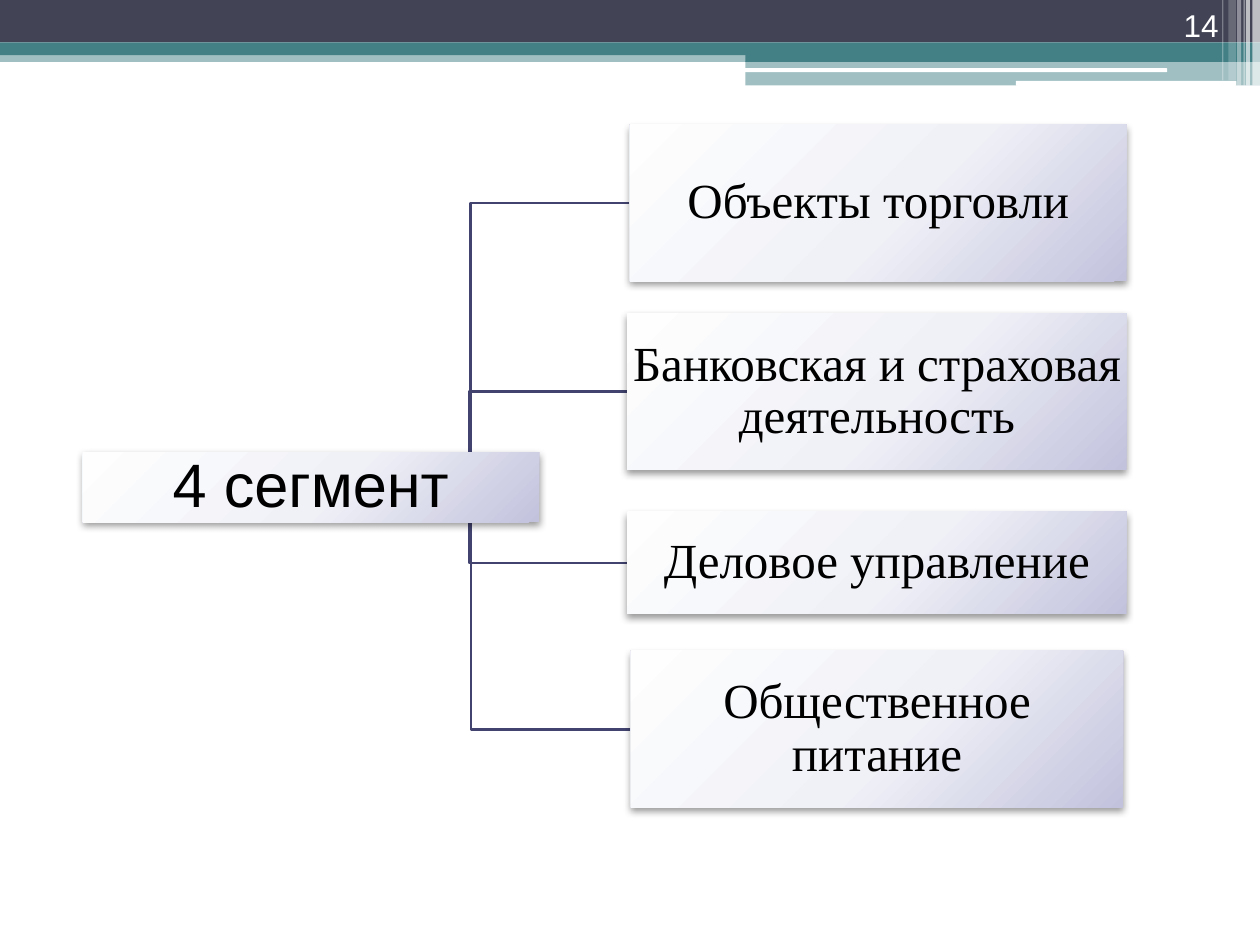
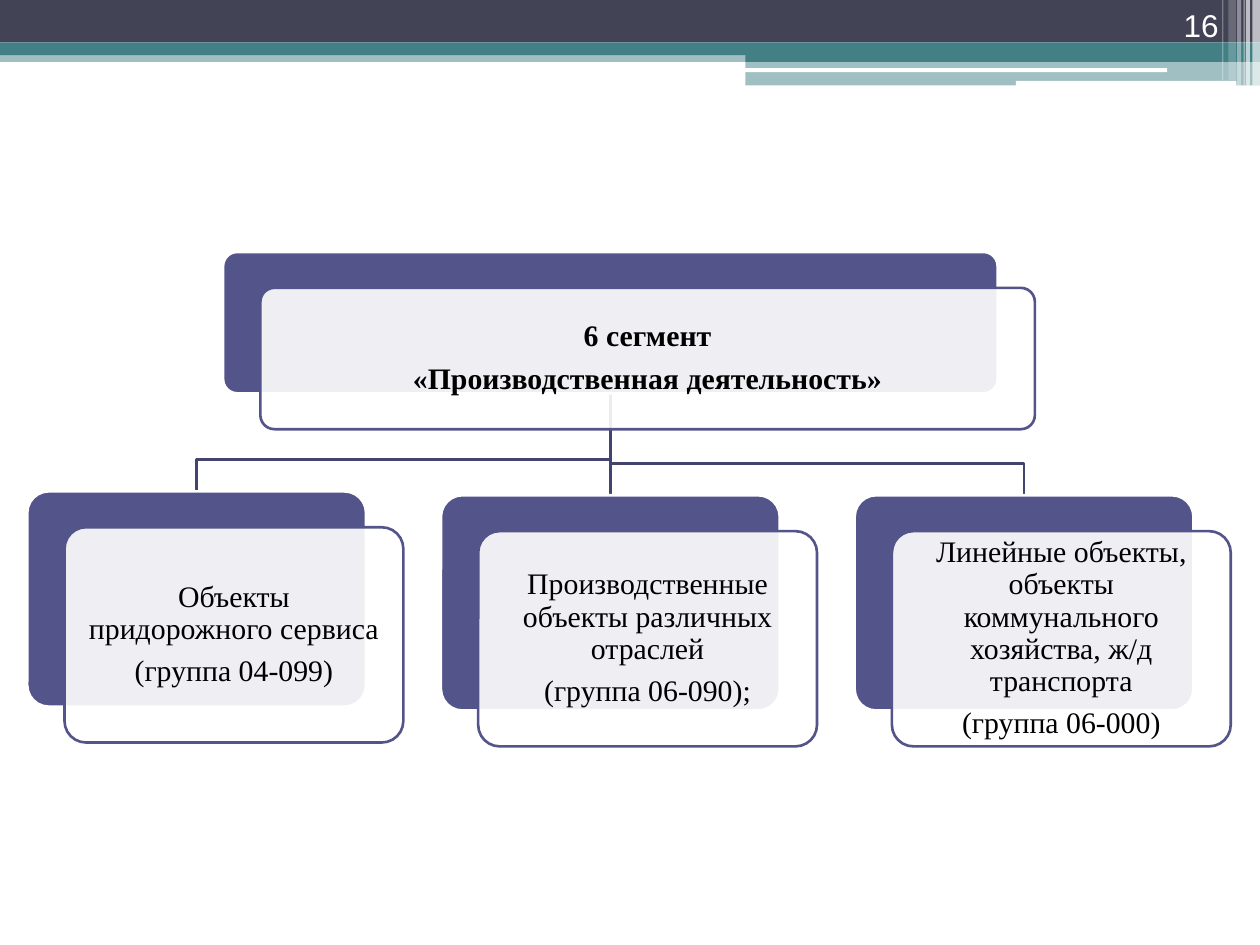
from dataclasses import dataclass
from typing import Optional

from lxml import etree
from pptx import Presentation
from pptx.dml.color import RGBColor
from pptx.enum.shapes import MSO_CONNECTOR, MSO_SHAPE
from pptx.enum.text import MSO_ANCHOR, PP_ALIGN
from pptx.oxml import parse_xml
from pptx.oxml.ns import nsdecls, qn
from pptx.util import Pt

RECTANGLE = MSO_SHAPE.RECTANGLE
ROUNDED = MSO_SHAPE.ROUNDED_RECTANGLE
STRAIGHT = MSO_CONNECTOR.STRAIGHT
CENTER, RIGHT = PP_ALIGN.CENTER, PP_ALIGN.RIGHT
MIDDLE, BOTTOM = MSO_ANCHOR.MIDDLE, MSO_ANCHOR.BOTTOM

WHITE = RGBColor(0xFF, 0xFF, 0xFF)
BLACK = RGBColor(0x00, 0x00, 0x00)
SLATE = RGBColor(0x42, 0x44, 0x56)
TEAL = RGBColor(0x43, 0x80, 0x86)
INDIGO = RGBColor(0x53, 0x54, 0x8A)
LINK = RGBColor(0x42, 0x43, 0x6F)
GRADIENT = (
    (0, RGBColor(0xFE, 0xFE, 0xFE)),
    (55, RGBColor(0xF0, 0xF1, 0xF7)),
    (100, RGBColor(0xC2, 0xC2, 0xDD)),
)

SANS, SERIF = "Arial", "Times New Roman"
LINE_WIDTH = 1.5
BEND_ABOVE_CARD = 18
CARD_SHIFT_X, CARD_SHIFT_Y = 21.3, 20.5


@dataclass(frozen=True)
class Area:
    left: float
    top: float
    width: float
    height: float

    @property
    def center_x(self) -> float:
        return self.left + self.width / 2

    @property
    def center_y(self) -> float:
        return self.top + self.height / 2

    @property
    def bottom(self) -> float:
        return self.top + self.height

    def shifted(self, across: float, down: float) -> "Area":
        return Area(self.left + across, self.top + down, self.width, self.height)


@dataclass(frozen=True)
class Band:
    area: Area
    color: RGBColor = WHITE
    opacity: int = 100
    kind: int = RECTANGLE


@dataclass(frozen=True)
class TextStyle:
    size: float
    font: str
    color: RGBColor = BLACK
    bold: bool = False
    align: int = CENTER
    anchor: int = MIDDLE
    margin: float = 1.6
    line_spacing: float = 0.9
    after: float = 0.35


@dataclass(frozen=True)
class Node:
    area: Area
    lines: tuple[str, ...]
    style: TextStyle


NUMBER_STYLE = TextStyle(18, SANS, WHITE, align=RIGHT, anchor=BOTTOM,
                         margin=7.2, line_spacing=1.0, after=0)
SEGMENT_STYLE = TextStyle(35, SANS)
TOPIC_STYLE = TextStyle(28, SERIF)
CARD_STYLE = TextStyle(17, SERIF, margin=8.6)
HEAD_CARD_STYLE = TextStyle(17, SERIF, bold=True, margin=8.6)

NUMBER_AREA = Area(643.7, 0, 59.8, 28.8)
BANDS = (
    Band(Area(0, 28.8, 720, 6.6), TEAL, 50),
    Band(Area(0, 0, 720, 24.3), SLATE),
    Band(Area(0, 24.3, 720, 7.2), TEAL),
    Band(Area(426, 28.2, 294, 7.2), TEAL),
    Band(Area(426, 34.8, 294, 14), TEAL, 50),
    Band(Area(425.5, 39, 241.5, 2.2), kind=ROUNDED),
    Band(Area(580.5, 46.2, 126, 2.8), kind=ROUNDED),
    Band(Area(715.7, 0, 4.3, 49), opacity=65),
    Band(Area(712, 0, 2.2, 49), opacity=65),
    Band(Area(710.6, 0, 0.7, 49), opacity=60),
    Band(Area(707, 0, 2.2, 49), opacity=40),
    Band(Area(702, 0, 4.3, 46), opacity=20),
    Band(Area(698.4, 0, 0.7, 46), opacity=30),
)

TRADE_ROOT = Node(Area(47.3, 258.4, 260.8, 40), ("4 сегмент",), SEGMENT_STYLE)
TRADE_TOPICS = (
    Node(Area(360, 71.3, 283.8, 89.5), ("Объекты торговли",), TOPIC_STYLE),
    Node(Area(358.4, 179, 285.4, 89.5),
         ("Банковская и страховая деятельность",), TOPIC_STYLE),
    Node(Area(358.4, 292.5, 285.4, 58.3), ("Деловое управление",), TOPIC_STYLE),
    Node(Area(360.6, 372, 281.2, 89.5), ("Общественное питание",), TOPIC_STYLE),
)

INDUSTRY_ROOT = Node(Area(127.5, 144, 442.6, 80.8),
                     ("6 сегмент", "«Производственная деятельность»"),
                     HEAD_CARD_STYLE)
INDUSTRY_CARDS = (
    (280.8, ("Объекты придорожного сервиса", "(группа 04-099)")),
    (283, ("Производственные объекты различных отраслей", "(группа 06-090);")),
    (283, ("Линейные объекты, объекты коммунального хозяйства, ж/д транспорта",
           "(группа 06-000)")),
)
CARD_LEFT, CARD_PITCH, CARD_WIDTH, CARD_HEIGHT = 15.6, 236.4, 193.6, 123


def lengths(area: Area) -> tuple[int, int, int, int]:
    return Pt(area.left), Pt(area.top), Pt(area.width), Pt(area.height)


def add_box(page, area: Area, kind: int, fill: RGBColor, opacity: int = 100,
            line: Optional[RGBColor] = None):
    box = page.shapes.add_shape(kind, *lengths(area))
    box.shadow.inherit = False
    box.fill.solid()
    box.fill.fore_color.rgb = fill
    if opacity < 100:
        color = box.element.spPr.find(qn("a:solidFill"))[0]
        etree.SubElement(color, qn("a:alpha"), val=str(opacity * 1000))
    if line is None:
        box.line.fill.background()
    else:
        box.line.color.rgb = line
        box.line.width = Pt(LINE_WIDTH)
    return box


def write_text(box, lines: tuple[str, ...], style: TextStyle) -> None:
    frame = box.text_frame
    frame.word_wrap = True
    frame.vertical_anchor = style.anchor
    frame.margin_left = frame.margin_right = Pt(style.margin)
    frame.margin_top = frame.margin_bottom = Pt(min(style.margin, 3.6))
    frame.text = "\n".join(lines)
    for para in frame.paragraphs:
        para.alignment = style.align
        para.line_spacing = style.line_spacing
        para.space_after = Pt(style.after * style.size)
        for span in para.runs:
            span.font.name = style.font
            span.font.size = Pt(style.size)
            span.font.bold = style.bold
            span.font.color.rgb = style.color


def add_gradient_and_shadow(box) -> None:
    properties = box.element.spPr
    stops = "".join(
        f'<a:gs pos="{position * 1000}"><a:srgbClr val="{color}"/></a:gs>'
        for position, color in GRADIENT
    )
    gradient = parse_xml(
        f'<a:gradFill {nsdecls("a")} rotWithShape="1"><a:gsLst>{stops}</a:gsLst>'
        '<a:path path="circle"><a:fillToRect l="-40000" t="-90000" '
        'r="140000" b="190000"/></a:path></a:gradFill>'
    )
    properties.replace(properties.find(qn("a:solidFill")), gradient)
    properties.find(qn("a:effectLst")).append(parse_xml(
        f'<a:outerShdw {nsdecls("a")} blurRad="{Pt(4.1)}" dist="{Pt(2)}" '
        'dir="5400000" rotWithShape="0"><a:srgbClr val="000000">'
        '<a:alpha val="40000"/></a:srgbClr></a:outerShdw>'
    ))


def add_link(page, points: list[tuple[float, float]]) -> None:
    start, *rest = [(Pt(x), Pt(y)) for x, y in points]
    builder = page.shapes.build_freeform(*start)
    builder.add_line_segments(rest, close=False)
    link = builder.convert_to_shape()
    link.shadow.inherit = False
    link.fill.background()
    link.line.color.rgb = LINK
    link.line.width = Pt(LINE_WIDTH)


def add_straight_link(page, upper, lower) -> None:
    link = page.shapes.add_connector(STRAIGHT, 0, 0, 0, 0)
    link.begin_connect(upper, 2)
    link.end_connect(lower, 0)
    link.line.color.rgb = LINK
    link.line.width = Pt(LINE_WIDTH)
    etree.SubElement(link.element.spPr, qn("a:effectLst"))
    upper.element.addprevious(link.element)


def add_page(deck, number: int):
    page = deck.slides.add_slide(deck.slide_layouts[6])
    for band in BANDS:
        add_box(page, band.area, band.kind, band.color, band.opacity)
    number_box = page.shapes.add_textbox(*lengths(NUMBER_AREA))
    write_text(number_box, (str(number),), NUMBER_STYLE)
    return page


def add_gradient_node(page, node: Node) -> None:
    box = add_box(page, node.area, RECTANGLE, WHITE)
    add_gradient_and_shadow(box)
    write_text(box, node.lines, node.style)


def add_card(page, node: Node):
    back = add_box(page, node.area, ROUNDED, INDIGO, line=WHITE)
    front = add_box(page, node.area.shifted(CARD_SHIFT_X, CARD_SHIFT_Y),
                    ROUNDED, WHITE, 90, INDIGO)
    for box in (back, front):
        box.adjustments[0] = 0.1
    write_text(front, node.lines, node.style)
    return back


def build_trade_page(deck) -> None:
    page = add_page(deck, 14)
    root = TRADE_ROOT.area
    for topic in reversed(TRADE_TOPICS):
        area = topic.area
        bend = (root.center_x + area.left) / 2
        add_link(page, [(root.center_x, root.center_y), (bend, root.center_y),
                        (bend, area.center_y), (area.left, area.center_y)])
    for node in (TRADE_ROOT, *TRADE_TOPICS):
        add_gradient_node(page, node)


def build_industry_page(deck) -> None:
    page = add_page(deck, 16)
    root = INDUSTRY_ROOT.area
    cards = [
        Node(Area(CARD_LEFT + index * CARD_PITCH, top, CARD_WIDTH, CARD_HEIGHT),
             lines, CARD_STYLE)
        for index, (top, lines) in enumerate(INDUSTRY_CARDS)
    ]
    for card in (cards[0], cards[-1]):
        area = card.area
        bend = area.top - BEND_ABOVE_CARD
        add_link(page, [(root.center_x, root.bottom), (root.center_x, bend),
                        (area.center_x, bend), (area.center_x, area.top)])
    root_box = add_card(page, INDUSTRY_ROOT)
    card_boxes = [add_card(page, card) for card in cards]
    add_straight_link(page, root_box, card_boxes[1])


def main() -> None:
    deck = Presentation()
    deck.slide_width, deck.slide_height = Pt(720), Pt(540)
    build_trade_page(deck)
    build_industry_page(deck)
    deck.save("out.pptx")


if __name__ == "__main__":
    main()
